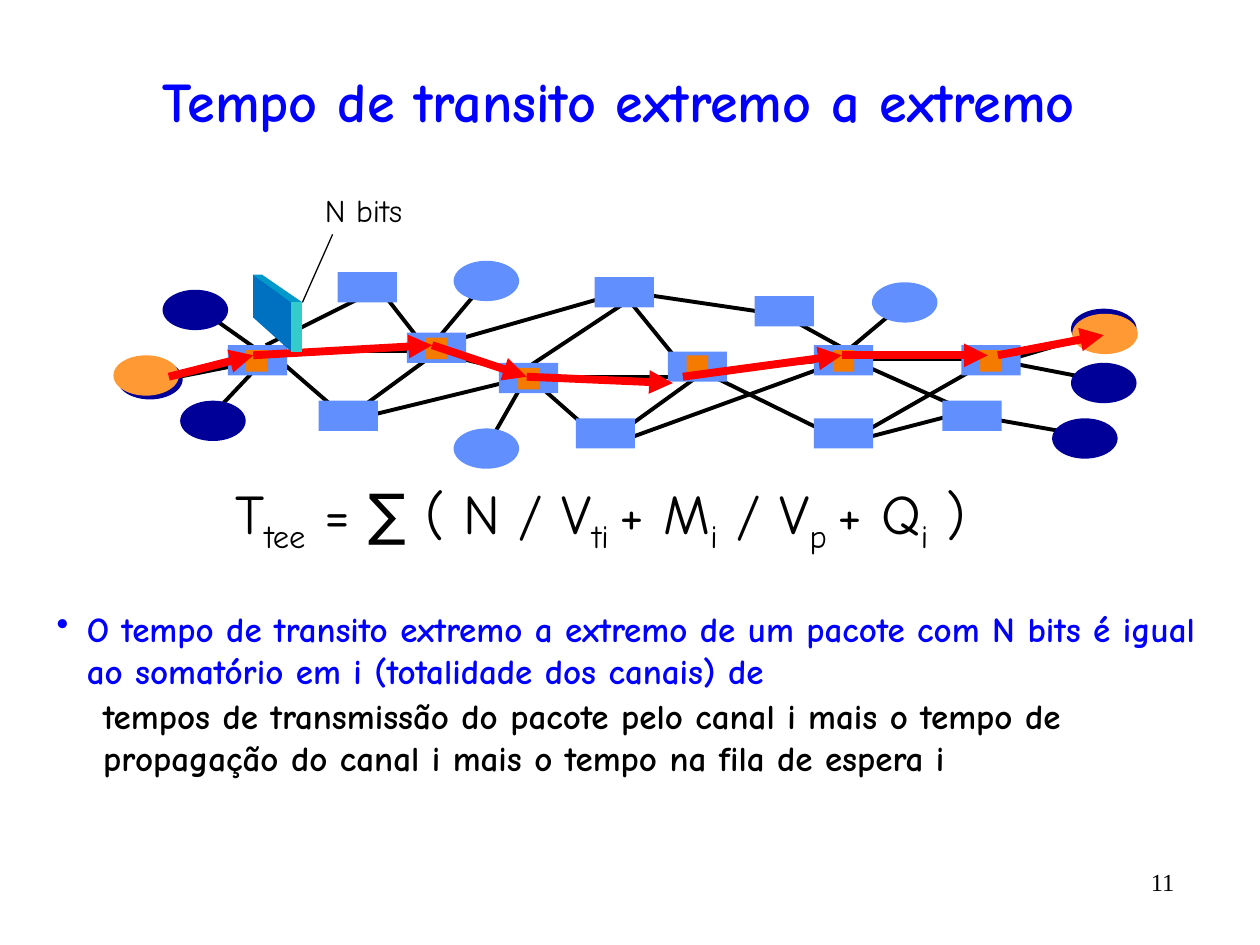
from typing import NamedTuple

from lxml import etree
from pptx import Presentation
from pptx.dml.color import RGBColor
from pptx.enum.shapes import MSO_CONNECTOR, MSO_SHAPE
from pptx.enum.text import MSO_ANCHOR, PP_ALIGN
from pptx.oxml.ns import qn
from pptx.util import Inches, Pt

RECT, OVAL = MSO_SHAPE.RECTANGLE, MSO_SHAPE.OVAL
STRAIGHT = MSO_CONNECTOR.STRAIGHT
LEFT, CENTER, RIGHT = PP_ALIGN.LEFT, PP_ALIGN.CENTER, PP_ALIGN.RIGHT
MIDDLE = MSO_ANCHOR.MIDDLE
COMIC, TIMES = "Comic Neue", "Times New Roman"
COLORS = {
    "black": "000000", "title": "0000FF", "router": "618FFD", "host": "000099",
    "queue": "F47A00", "endpoint": "FF9933", "route": "FF0000",
    "packet_front": "0070C0", "packet_top": "0099CC", "packet_side": "33CCCC",
}


class Line(NamedTuple):
    x1: float
    y1: float
    x2: float
    y2: float


class NodeSet(NamedTuple):
    """Equal shapes, placed by their top left corners."""
    kind: MSO_SHAPE
    color: str
    w: float
    h: float
    corners: list[tuple[float, float]]


LINKS = [
    Line(3.85, 2.24, 3.43, 2.74), Line(4.18, 2.99, 3.85, 3.57),
    Line(7.17, 2.41, 6.68, 2.82), Line(7.73, 3.3, 8.58, 3.45),
    Line(7.99, 2.86, 8.67, 2.66), Line(7.91, 2.86, 8.79, 3.03),
    Line(4.21, 3, 4.8, 3.52), Line(5.44, 2.99, 4.28, 2.99),
    Line(5.52, 3, 4.8, 3.52), Line(4.82, 3.54, 6.72, 2.85),
    Line(6.77, 2.85, 7.89, 2.85), Line(6.77, 2.86, 7.71, 3.28),
    Line(6.77, 3.48, 7.89, 2.84), Line(6.85, 3.48, 7.62, 3.28),
    Line(5.01, 2.3, 3.4, 2.76), Line(1.71, 2.54, 2.05, 2.78),
    Line(2.15, 2.8, 1.66, 3.32), Line(6.18, 2.48, 6.83, 2.84),
    Line(4.86, 2.3, 6.28, 2.51), Line(2.15, 2.8, 2.75, 3.32),
    Line(3.38, 2.79, 2.22, 2.79), Line(3.46, 2.8, 2.75, 3.32),
    Line(3.46, 2.8, 4.14, 2.96), Line(2.76, 3.34, 4.32, 2.96),
    Line(2.11, 2.74, 3.01, 2.29), Line(4.15, 2.94, 4.95, 2.41),
    Line(2.13, 2.85, 1.22, 3.03), Line(4.98, 2.37, 5.46, 2.96),
    Line(5.44, 2.88, 6.72, 3.51), Line(3.01, 2.29, 3.4, 2.79),
    Line(5.63, 2.95, 6.75, 2.84),
]
NODES = [
    NodeSet(RECT, "router", 0.47, 0.24, [
        (1.81, 2.74), (2.53, 3.18), (7.63, 2.74), (6.46, 2.74), (6.46, 3.32),
        (5.3, 2.79), (4.72, 2.2), (4.57, 3.32), (5.99, 2.35), (3.23, 2.64),
        (3.96, 2.88), (2.68, 2.16), (7.48, 3.18)]),
    NodeSet(OVAL, "host", 0.52, 0.32, [
        (8.35, 3.32), (8.5, 2.88), (8.5, 2.45), (1.43, 3.18), (0.93, 2.85),
        (1.29, 2.3)]),
    NodeSet(RECT, "queue", 0.17, 0.17, [
        (1.95, 2.78), (6.61, 2.78), (5.45, 2.82), (4.11, 2.92), (3.38, 2.68),
        (7.78, 2.78)]),
]
CORE_ROUTE = [
    Line(2.01, 2.82, 3.43, 2.74), Line(3.43, 2.74, 4.18, 2.99),
    Line(4.18, 2.99, 5.34, 3.04), Line(5.42, 2.99, 6.68, 2.82),
    Line(6.68, 2.82, 7.84, 2.82),
]
OUTER_NODES = [
    NodeSet(OVAL, "router", 0.52, 0.32, [(3.6, 2.07), (3.6, 3.4), (6.92, 2.24)]),
    NodeSet(OVAL, "endpoint", 0.52, 0.32, [(8.51, 2.49), (0.9, 2.82)]),
]
ACCESS_ROUTE = [Line(1.34, 2.99, 2.01, 2.82), Line(7.92, 2.82, 8.76, 2.66)]
PACKET_FACES = {
    "packet_front": [(2.01, 2.18), (2.01, 2.52), (2.31, 2.79), (2.31, 2.39)],
    "packet_top": [(2.08, 2.18), (2.01, 2.18), (2.31, 2.4), (2.4, 2.4)],
    "packet_side": [(2.31, 2.4), (2.4, 2.4), (2.4, 2.79), (2.31, 2.79)],
}
# Normal text and subscripts alternate.
FORMULA = ["T", "tee", " = ∑ ( N / V", "ti ", "+ M", "i", " / V", "p ", "+ Q", "i", " )"]


def rgb(name: str) -> RGBColor:
    return RGBColor.from_string(COLORS[name])


def paint(s, color: str) -> None:
    s.shadow.inherit = False
    s.fill.solid()
    s.fill.fore_color.rgb = rgb(color)
    s.line.fill.background()


def draw_nodes(shapes, nodes: NodeSet) -> None:
    for x, y in nodes.corners:
        s = shapes.add_shape(nodes.kind, Inches(x), Inches(y), Inches(nodes.w), Inches(nodes.h))
        paint(s, nodes.color)


def draw_line(shapes, line: Line, color: str, width: float, arrow: bool = False) -> None:
    s = shapes.add_connector(STRAIGHT, *(Inches(v) for v in line))
    s.line.color.rgb = rgb(color)
    s.line.width = Pt(width)
    if arrow:
        etree.SubElement(s.line._get_or_add_ln(), qn("a:tailEnd"), type="triangle")
    etree.SubElement(s._element.spPr, qn("a:effectLst"))


def draw_polygon(shapes, points: list[tuple[float, float]], color: str) -> None:
    start, *rest = [(Inches(x), Inches(y)) for x, y in points]
    builder = shapes.build_freeform(*start)
    builder.add_line_segments(rest)
    paint(builder.convert_to_shape(), color)


def add_text_frame(shapes, x: float, y: float, w: float, h: float):
    tf = shapes.add_textbox(Inches(x), Inches(y), Inches(w), Inches(h)).text_frame
    tf.word_wrap = True
    return tf


def style(p, size: float, color: str = "black", font: str = COMIC,
          bold: bool = False, align: PP_ALIGN = LEFT) -> None:
    p.alignment = align
    p.font.size, p.font.name, p.font.bold = Pt(size), font, bold
    p.font.color.rgb = rgb(color)


def indent(p, margin: float, first: float, bullet: str = "") -> None:
    pPr = p._p.get_or_add_pPr()
    pPr.set("marL", str(Inches(margin)))
    pPr.set("indent", str(Inches(first)))
    if bullet:
        mark = etree.Element(qn("a:buChar"), char=bullet)
        pPr.insert_element_before(mark, "a:tabLst", "a:defRPr", "a:extLst")


def draw_network(shapes) -> None:
    for line in LINKS:
        draw_line(shapes, line, "black", 2.25)
    for nodes in NODES:
        draw_nodes(shapes, nodes)
    for line in CORE_ROUTE:
        draw_line(shapes, line, "route", 4.5, arrow=True)
    for nodes in OUTER_NODES:
        draw_nodes(shapes, nodes)
    for line in ACCESS_ROUTE:
        draw_line(shapes, line, "route", 4.5, arrow=True)
    for color, points in PACKET_FACES.items():
        draw_polygon(shapes, points, color)
    draw_line(shapes, Line(2.4, 2.4, 2.64, 1.86), "black", 0.75)


def write_texts(shapes) -> None:
    tf = add_text_frame(shapes, 0.33, 0.42, 9.17, 0.75)
    tf.vertical_anchor = MIDDLE
    tf.text = "Tempo de transito extremo a extremo"
    style(tf.paragraphs[0], 32, "title", bold=True, align=CENTER)

    tf = add_text_frame(shapes, 8.42, 6.83, 1, 0.42)
    tf.text = "11"
    style(tf.paragraphs[0], 14, font=TIMES, align=RIGHT)

    tf = add_text_frame(shapes, 2.48, 1.47, 0.94, 0.4)
    tf.text = "N bits"
    style(tf.paragraphs[0], 18)

    p = add_text_frame(shapes, 1.77, 3.75, 6.7, 0.64).paragraphs[0]
    style(p, 32)
    for i, part in enumerate(FORMULA):
        r = p.add_run()
        r.text = part
        if i % 2:
            r.font._element.set("baseline", "-25000")

    tf = add_text_frame(shapes, 0.35, 4.77, 9.42, 2.36)
    tf.text = ("O tempo de transito extremo a extremo de um pacote com N bits é igual "
               "ao somatório em i (totalidade dos canais) de")
    p = tf.paragraphs[0]
    style(p, 20, "title", bold=True)
    indent(p, 0.24, -0.24, "•")
    p = tf.add_paragraph()
    p.text = ("tempos de transmissão do pacote pelo canal i mais o tempo de propagação "
              "do canal i mais o tempo na fila de espera i")
    p.level = 1
    p.space_before = Pt(2)
    style(p, 20, bold=True)
    indent(p, 0.37, 0)


def main() -> None:
    prs = Presentation()
    prs.slide_width, prs.slide_height = Inches(10), Inches(7.5)
    shapes = prs.slides.add_slide(prs.slide_layouts[6]).shapes
    draw_network(shapes)
    write_texts(shapes)
    prs.save("out.pptx")


if __name__ == "__main__":
    main()
